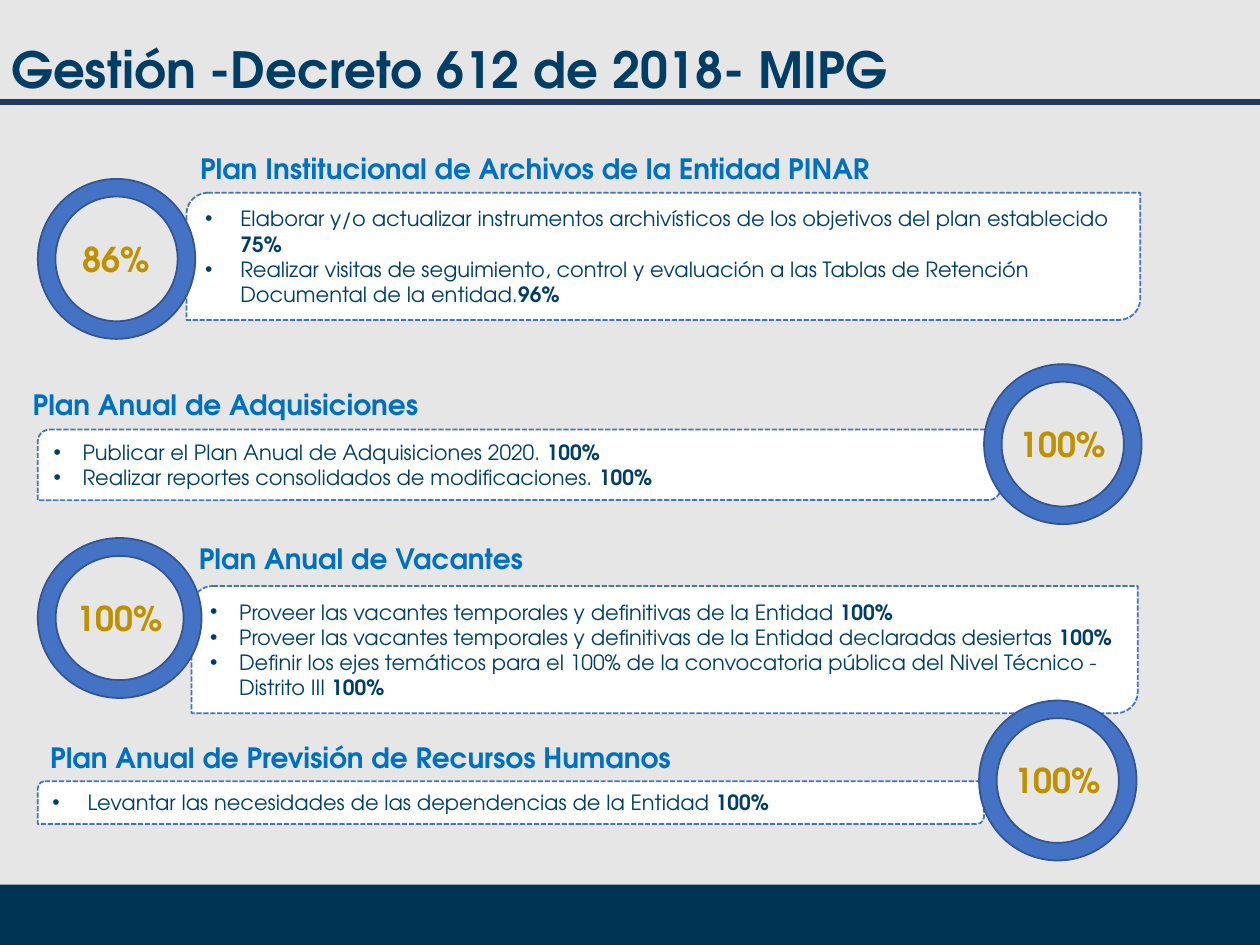
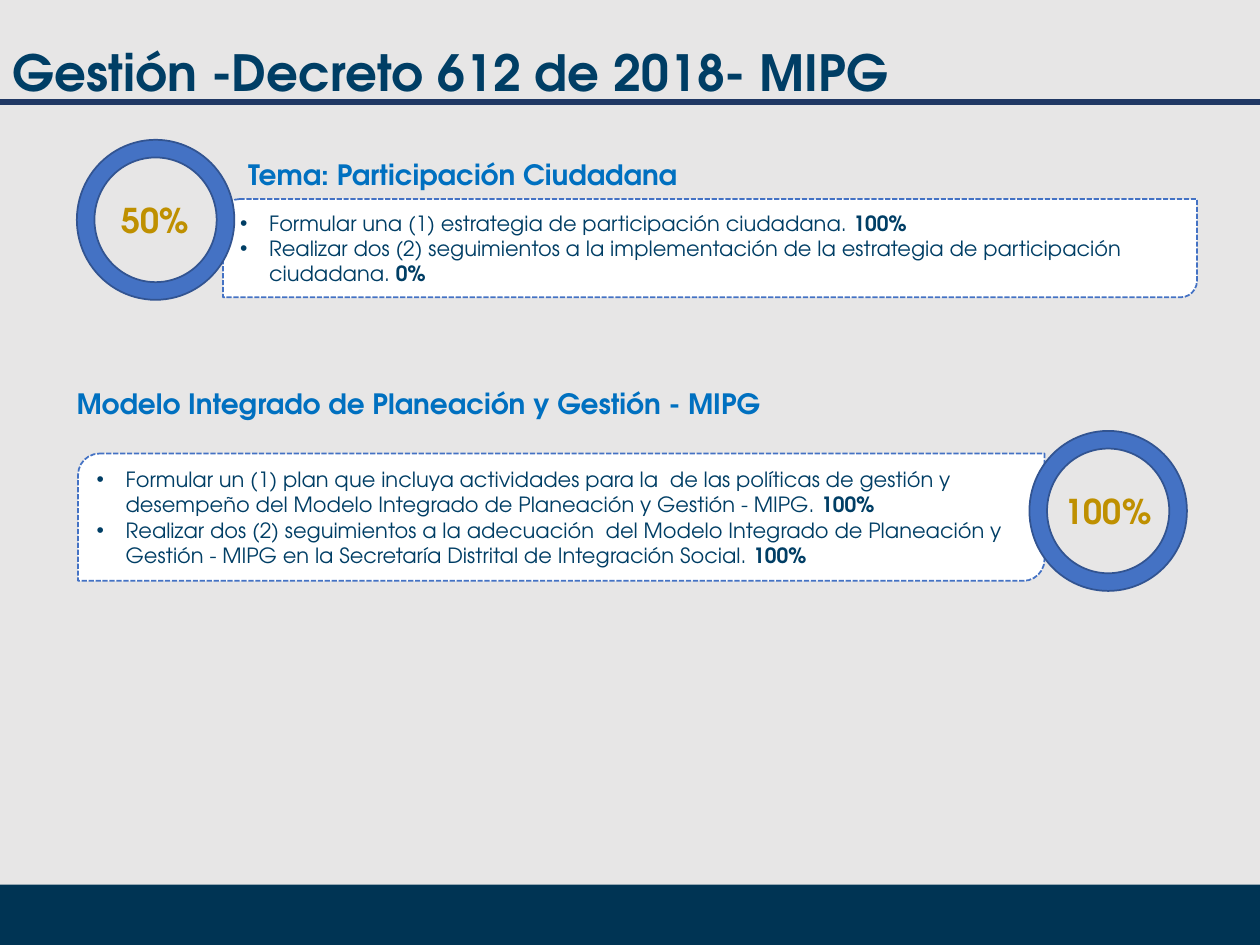
from dataclasses import dataclass

from lxml.etree import SubElement
from pptx import Presentation
from pptx.dml.color import RGBColor
from pptx.enum.dml import MSO_LINE
from pptx.enum.shapes import MSO_CONNECTOR, MSO_SHAPE
from pptx.enum.text import MSO_ANCHOR, MSO_AUTO_SIZE, PP_ALIGN
from pptx.oxml.ns import qn
from pptx.util import Inches, Pt


@dataclass(frozen=True)
class Theme:
    font: str = "TeX Gyre Adventor"
    back: str = "E7E6E6"
    band: str = "003454"
    rule: str = "203864"
    ink: str = "003E65"
    head: str = "0070C0"
    gold: str = "BF9000"
    ring: str = "4472C4"
    edge: str = "325491"
    card: str = "FFFFFF"
    title_size: float = 28.5
    head_size: float = 16
    body_size: float = 12
    rate_size: float = 19.5


T = Theme()
LEFT, MID = PP_ALIGN.LEFT, PP_ALIGN.CENTER


def write(shape, rows, size=T.body_size, color=T.ink, bold=False,
          align=LEFT, anchor=MSO_ANCHOR.MIDDLE, dent=0):
    """Fill a shape with rows of (text, bold ending)."""
    frame = shape.text_frame
    frame.word_wrap = True
    frame.auto_size = MSO_AUTO_SIZE.NONE
    frame.vertical_anchor = anchor
    for i, (text, end) in enumerate(rows):
        para = frame.add_paragraph() if i else frame.paragraphs[0]
        para.alignment = align
        if dent:
            props = para._p.get_or_add_pPr()
            props.set("marL", str(Inches(dent)))
            props.set("indent", str(-Inches(dent)))
            SubElement(props, qn("a:buFont")).set("typeface", "Arial")
            SubElement(props, qn("a:buChar")).set("char", "•")
        for part, heavy in ((text, bold), (end, True)):
            if part:
                run = para.add_run()
                run.text = part
                run.font.name = T.font
                run.font.size = Pt(size)
                run.font.bold = heavy
                run.font.color.rgb = RGBColor.from_string(color)


def draw(shapes, kind, place, fill, line=None):
    """Add a filled shape, with a thin outline if a line colour is given."""
    shape = shapes.add_shape(kind, *map(Inches, place))
    shape.shadow.inherit = False
    shape.fill.solid()
    shape.fill.fore_color.rgb = RGBColor.from_string(fill)
    if line:
        shape.line.color.rgb = RGBColor.from_string(line)
        shape.line.width = Pt(1)
    else:
        shape.line.fill.background()
    return shape


# Plans: heading (text, x, y, width, align), card place, indent,
# ring (x, y, width), rate, tasks
pages = [
    ((-0.01, 0.29), [
        (("Plan Institucional de Archivos de la Entidad PINAR", 1.42, 1.15, 5.65, MID),
         (1.48, 1.53, 7.57, 1.01), 0.28, (0.3, 1.42, 1.25), "86%", [
            ("Elaborar y/o actualizar instrumentos archivísticos de los objetivos "
             "del plan establecido ", "75%"),
            ("Realizar visitas de seguimiento, control y evaluación a las Tablas de "
             "Retención Documental de la entidad.", "96%")]),
        (("Plan Anual de Adquisiciones", 0.15, 3.03, 3.28, MID),
         (0.3, 3.41, 7.64, 0.56), 0.23, (7.81, 2.89, 1.25), "100%", [
            ("Publicar el Plan Anual de Adquisiciones 2020. ", "100%"),
            ("Realizar reportes consolidados de modificaciones. ", "100%")]),
        (("Plan Anual de Vacantes", 1.48, 4.25, 3.04, LEFT),
         (1.52, 4.65, 7.51, 1.01), 0.23, (0.3, 4.27, 1.3), "100%", [
            ("Proveer las vacantes temporales y definitivas de la Entidad ", "100%"),
            ("Proveer las vacantes temporales y definitivas de la Entidad "
             "declaradas desiertas ", "100%"),
            ("Definir los ejes temáticos para el 100% de la convocatoria pública "
             "del Nivel Técnico - Distrito III ", "100%")]),
        (("Plan Anual de Previsión de Recursos Humanos", 0.3, 5.83, 6.4, LEFT),
         (0.3, 6.2, 7.51, 0.34), 0.28, (7.77, 5.56, 1.25), "100%", [
            ("Levantar las necesidades de las dependencias de la Entidad ", "100%")]),
    ]),
    ((0, 0.31), [
        (("Tema: Participación Ciudadana", 1.87, 1.2, 7.15, LEFT),
         (1.77, 1.58, 7.73, 0.78), 0.23, (0.61, 1.11, 1.25), "50%", [
            ("Formular una (1) estrategia de participación ciudadana. ", "100%"),
            ("Realizar dos (2) seguimientos a la implementación de la estrategia "
             "de participación ciudadana. ", "0%")]),
        (("Modelo Integrado de Planeación y Gestión - MIPG", 0.51, 3.02, 8, LEFT),
         (0.62, 3.6, 7.67, 1.01), 0.23, (8.17, 3.42, 1.25), "100%", [
            ("Formular un (1) plan que incluya actividades para la  de las políticas "
             "de gestión y desempeño del Modelo Integrado de Planeación y Gestión "
             "- MIPG. ", "100%"),
            ("Realizar dos (2) seguimientos a la adecuación  del Modelo Integrado de "
             "Planeación y Gestión - MIPG en la Secretaría Distrital de Integración "
             "Social. ", "100%")]),
    ]),
]

deck = Presentation()
deck.slide_width, deck.slide_height = Inches(10), Inches(7.5)
back = deck.slide_master.background.fill
back.solid()
back.fore_color.rgb = RGBColor.from_string(T.back)

for (left, top), plans in pages:
    slide = deck.slides.add_slide(deck.slide_layouts[5])
    shapes = slide.shapes

    # Footer band and title rule
    draw(shapes, MSO_SHAPE.RECTANGLE, (0, 7.02, 10, 0.48), T.band)
    rule = shapes.add_connector(MSO_CONNECTOR.STRAIGHT, 0, Inches(0.81),
                                Inches(10), Inches(0.81))
    rule.line.color.rgb = RGBColor.from_string(T.rule)
    rule.line.width = Pt(3)
    SubElement(rule._element.spPr, qn("a:effectLst"))

    # Title
    title = shapes.title
    title.left, title.top = Inches(left), Inches(top)
    title.width, title.height = Inches(8.44), Inches(0.51)
    write(title, [("Gestión -Decreto 612 de 2018- MIPG", "")],
          size=T.title_size, bold=True)

    for (name, x, y, wide, align), place, dent, ring, rate, tasks in plans:
        # Task card
        card = draw(shapes, MSO_SHAPE.ROUND_2_DIAG_RECTANGLE, place, T.card, T.ring)
        card.line.dash_style = MSO_LINE.SQUARE_DOT
        write(card, tasks, dent=dent)

        # Heading
        head = shapes.add_textbox(*map(Inches, (x, y, wide, 0.37)))
        write(head, [(name, "")], size=T.head_size, color=T.head, bold=True,
              align=align, anchor=MSO_ANCHOR.TOP)

        # Ring with its rate
        x, y, wide = ring
        group = shapes.add_group_shape().shapes
        donut = draw(group, MSO_SHAPE.DONUT, (x, y, wide, 1.27), T.ring, T.edge)
        donut.adjustments[0] = 0.112
        label = group.add_textbox(*map(Inches, (x, y + 0.42, wide, 0.43)))
        write(label, [(rate, "")], size=T.rate_size, color=T.gold, bold=True,
              align=MID, anchor=MSO_ANCHOR.TOP)

deck.save("out.pptx")
